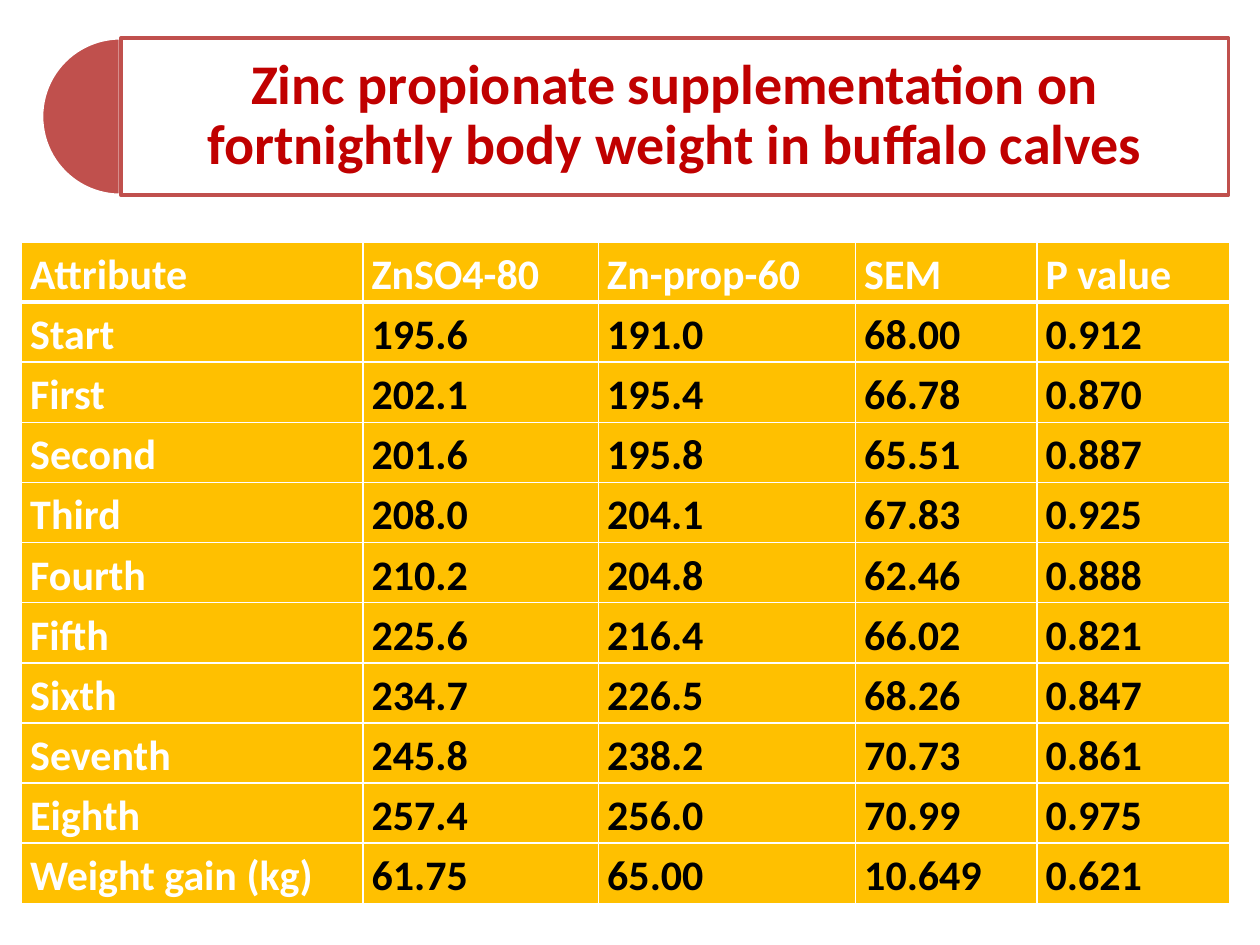
import dataclasses

import pptx
import pptx.dml.color
import pptx.enum.shapes
import pptx.enum.text
import pptx.oxml
import pptx.oxml.ns
import pptx.util
from pptx.util import Inches

COLORS = {"white": "FFFFFF", "black": "000000", "title": "C00000",
          "accent": "C0504D", "cell": "FFC000"}
FONT = "Calibri"
TITLE = "Zinc propionate supplementation on fortnightly body weight in buffalo calves"
TITLE_BOX = (0.96, 0.3, 8.79, 1.25)
TABLE_BOX = (0.17, 1.92, 9.58, 5.25)
COLUMN_WIDTHS = (2.71, 1.87, 2.04, 1.44, 1.53)
HEADER = ("Attribute", "ZnSO4-80", "Zn-prop-60", "SEM", "P value")


@dataclasses.dataclass(frozen=True)
class Weighing:
    label: str
    sulphate: str
    propionate: str
    sem: str
    p_value: str


WEIGHINGS = (
    Weighing("Start", "195.6", "191.0", "68.00", "0.912"),
    Weighing("First", "202.1", "195.4", "66.78", "0.870"),
    Weighing("Second", "201.6", "195.8", "65.51", "0.887"),
    Weighing("Third", "208.0", "204.1", "67.83", "0.925"),
    Weighing("Fourth", "210.2", "204.8", "62.46", "0.888"),
    Weighing("Fifth", "225.6", "216.4", "66.02", "0.821"),
    Weighing("Sixth", "234.7", "226.5", "68.26", "0.847"),
    Weighing("Seventh", "245.8", "238.2", "70.73", "0.861"),
    Weighing("Eighth", "257.4", "256.0", "70.99", "0.975"),
    Weighing("Weight gain (kg)", "61.75", "65.00", "10.649", "0.621"),
)


def rgb(name: str) -> pptx.dml.color.RGBColor:
    return pptx.dml.color.RGBColor.from_string(COLORS[name])


def set_attributes(target, values: dict) -> None:
    for name, value in values.items():
        setattr(target, name, value)


def write(tf, text: str, size: int, color: str, paragraph: dict) -> None:
    p = tf.paragraphs[0]
    set_attributes(p, paragraph)
    r = p.add_run()
    r.text = text
    set_attributes(r.font, {"name": FONT, "size": pptx.util.Pt(size), "bold": True})
    r.font.color.rgb = rgb(color)


def add_panel(shapes, kind, box: tuple, fill: str, line: str):
    sp = shapes.add_shape(kind, *map(Inches, box))
    sp.shadow.inherit = False
    sp.fill.solid()
    sp.fill.fore_color.rgb = rgb(fill)
    sp.line.color.rgb = rgb(line)
    sp.line.width = pptx.util.Pt(2)
    return sp


def set_opacity(sp, percent: int) -> None:
    color = sp.fill._xPr.find(pptx.oxml.ns.qn("a:solidFill"))[0]
    alpha = pptx.oxml.parse_xml(
        f'<a:alpha {pptx.oxml.ns.nsdecls("a")} val="{percent * 1000}"/>')
    color.append(alpha)


def add_title(slide) -> None:
    shapes = slide.shapes.add_group_shape().shapes
    kinds = pptx.enum.shapes.MSO_SHAPE
    pie = add_panel(shapes, kinds.PIE, (0.33, 0.3, 1.25, 1.25), "accent", "white")
    pie.adjustments[0], pie.adjustments[1] = 54, 162
    panel = add_panel(shapes, kinds.RECTANGLE, TITLE_BOX, "white", "accent")
    set_opacity(panel, 90)

    tf = shapes.add_textbox(*map(Inches, TITLE_BOX)).text_frame
    margins = ("margin_left", "margin_top", "margin_right", "margin_bottom")
    set_attributes(tf, dict.fromkeys(margins, Inches(0.13)))
    set_attributes(tf, {"word_wrap": True,
                        "vertical_anchor": pptx.enum.text.MSO_ANCHOR.MIDDLE})
    write(tf, TITLE, 32, "title",
          {"alignment": pptx.enum.text.PP_ALIGN.CENTER, "line_spacing": 0.9})


def add_borders(cell, top: int, bottom: int) -> None:
    """Draw white borders; widths are in points, sides are always 1."""
    tc_pr = cell._tc.get_or_add_tcPr()
    for side, width in (("L", 1), ("R", 1), ("T", top), ("B", bottom)):
        tc_pr.append(pptx.oxml.parse_xml(
            f'<a:ln{side} {pptx.oxml.ns.nsdecls("a")} w="{pptx.util.Pt(width)}">'
            f'<a:solidFill><a:srgbClr val="{COLORS["white"]}"/></a:solidFill>'
            f'</a:ln{side}>'))


def add_weight_table(slide) -> None:
    rows = [HEADER, *map(dataclasses.astuple, WEIGHINGS)]
    table = slide.shapes.add_table(
        len(rows), len(HEADER), *map(Inches, TABLE_BOX)).table
    table.horz_banding = False
    for column, width in zip(table.columns, COLUMN_WIDTHS):
        column.width = Inches(width)
    for i, values in enumerate(rows):
        table.rows[i].height = Inches(TABLE_BOX[3] / len(rows))
        for j, text in enumerate(values):
            cell = table.cell(i, j)
            set_attributes(cell, {"margin_left": Inches(0.07), "margin_right": Inches(0.07),
                                  "margin_top": 0, "margin_bottom": 0})
            add_borders(cell, top=3 if i == 1 else 1, bottom=3 if i == 0 else 1)
            cell.fill.solid()
            cell.fill.fore_color.rgb = rgb("cell")
            color = "white" if i == 0 or j == 0 else "black"
            write(cell.text_frame, text, 24, color, {"line_spacing": 1.15})


def main() -> None:
    prs = pptx.Presentation()
    prs.slide_width, prs.slide_height = Inches(10), Inches(7.5)
    slide = prs.slides.add_slide(prs.slide_layouts[6])
    add_title(slide)
    add_weight_table(slide)
    prs.save("out.pptx")


if __name__ == "__main__":
    main()
